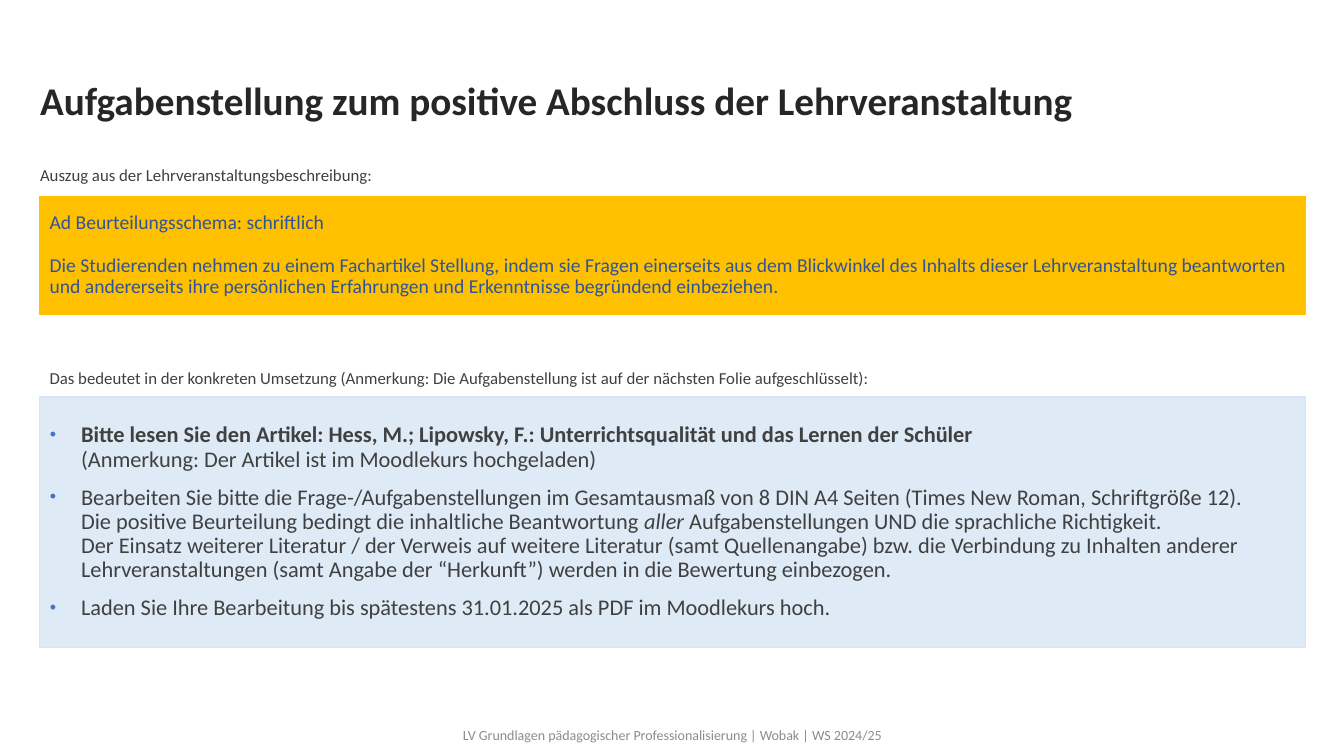
from lxml import etree
from pptx import Presentation
from pptx import util as u
from pptx.dml.color import RGBColor
from pptx.enum import shapes, text
from pptx.oxml.ns import qn

COLOURS = {
    "title": "262626",
    "body": "404040",
    "footer": "8C8C8C",
    "bullet": "4472C4",
    "task_fill": "DEEBF7",
    "task_line": "DAE3F3",
    "excerpt_fill": "FFC000",
    "excerpt_text": "2F5597",
}
FONT = "Calibri"
BOX_LEFT, BOX_WIDTH = 1, 31.9
HANGING = 0.79

EXCERPT = [
    [("Ad Beurteilungsschema: schriftlich", "")],
    [("Die Studierenden nehmen zu einem Fachartikel Stellung, indem sie Fragen einerseits aus dem "
      "Blickwinkel des Inhalts dieser Lehrveranstaltung beantworten und andererseits ihre "
      "persönlichen Erfahrungen und Erkenntnisse begründend einbeziehen.", "")],
]
TASKS = [
    [("Bitte lesen Sie den Artikel: Hess, M.; Lipowsky, F.: Unterrichtsqualität und das Lernen "
      "der Schüler\n", "bold"),
     ("(Anmerkung: Der Artikel ist im Moodlekurs hochgeladen)", "")],
    [("Bearbeiten Sie bitte die Frage-/Aufgabenstellungen im Gesamtausmaß von 8 DIN A4 Seiten "
      "(Times New Roman, Schriftgröße 12).\n"
      "Die positive Beurteilung bedingt die inhaltliche Beantwortung ", ""),
     ("aller ", "italic"),
     ("Aufgabenstellungen UND die sprachliche Richtigkeit.\n"
      "Der Einsatz weiterer Literatur / der Verweis auf weitere Literatur (samt Quellenangabe) "
      "bzw. die Verbindung zu Inhalten anderer Lehrveranstaltungen (samt Angabe der “Herkunft”) "
      "werden in die Bewertung einbezogen.", "")],
    [("Laden Sie Ihre Bearbeitung bis spätestens 31.01.2025 als PDF im Moodlekurs hoch.", "")],
]


def colour(name):
    return RGBColor.from_string(COLOURS[name])


def place(part, left, top, width, height):
    part.left, part.top = u.Cm(left), u.Cm(top)
    part.width, part.height = u.Cm(width), u.Cm(height)


def paint(part, fill, line):
    part.fill.solid()
    part.fill.fore_color.rgb = colour(fill)
    part.line.color.rgb = colour(line)
    part.line.width = u.Pt(1)


def add_bullet(paragraph):
    properties = paragraph._p.get_or_add_pPr()
    properties.set("marL", str(u.Cm(HANGING)))
    properties.set("indent", str(-u.Cm(HANGING)))
    tint = etree.SubElement(properties, qn("a:buClr"))
    etree.SubElement(tint, qn("a:srgbClr"), val=COLOURS["bullet"])
    etree.SubElement(properties, qn("a:buSzPct"), val="80000")
    etree.SubElement(properties, qn("a:buFont"), typeface="Arial")
    etree.SubElement(properties, qn("a:buChar"), char="•")


def add_styled_run(paragraph, wording, style, size, ink):
    for number, line in enumerate(wording.split("\n")):
        if number:
            paragraph.add_line_break()
        if line:
            run = paragraph.add_run()
            run.text = line
            run.font.name, run.font.size = FONT, u.Pt(size)
            run.font.color.rgb = colour(ink)
            run.font.bold = style == "bold"
            run.font.italic = style == "italic"


def write(part, paragraphs, size, ink, gap=0, spacing=0.9, bulleted=False,
          align=text.PP_ALIGN.LEFT):
    frame = part.text_frame
    frame.word_wrap = True
    frame.auto_size = text.MSO_AUTO_SIZE.NONE
    frame.vertical_anchor = text.MSO_ANCHOR.MIDDLE
    for number, runs in enumerate(paragraphs):
        paragraph = frame.add_paragraph() if number else frame.paragraphs[0]
        if bulleted:
            add_bullet(paragraph)
        paragraph.alignment = align
        paragraph.line_spacing = spacing
        paragraph.space_before = u.Pt(gap if number else 0)
        paragraph.font.size = u.Pt(size)
        for wording, style in runs:
            add_styled_run(paragraph, wording, style, size, ink)


def add_label(slide, wording, left, top, width, size=12, ink="body", **layout):
    label = slide.shapes.add_textbox(0, 0, 0, 0)
    place(label, left, top, width, 1.02)
    write(label, [[(wording, "")]], size, ink, **layout)


def add_excerpt(slide):
    excerpt = slide.shapes.add_shape(shapes.MSO_SHAPE.RECTANGLE, 0, 0, 0, 0)
    excerpt.shadow.inherit = False
    place(excerpt, BOX_LEFT, 4.95, BOX_WIDTH, 2.97)
    paint(excerpt, "excerpt_fill", "excerpt_line" if "excerpt_line" in COLOURS else "excerpt_fill")
    write(excerpt, EXCERPT, 14, "excerpt_text", gap=15.4)


def fill_title(title):
    place(title, 0.76, 0.76, 32, 3.68)
    write(title, [[("Aufgabenstellung zum positive Abschluss der Lehrveranstaltung", "bold")]],
          28, "title")


def fill_tasks(tasks):
    place(tasks, BOX_LEFT, 10, BOX_WIDTH, 6.32)
    paint(tasks, "task_fill", "task_line")
    write(tasks, TASKS, 16, "body", gap=10, bulleted=True)


def main():
    deck = Presentation()
    deck.slide_width, deck.slide_height = u.Cm(33.87), u.Cm(19.05)
    slide = deck.slides.add_slide(deck.slide_layouts[1])
    fill_title(slide.shapes.title)
    fill_tasks(slide.placeholders[1])
    add_excerpt(slide)
    add_label(slide, "Auszug aus der Lehrveranstaltungsbeschreibung:", 0.76, 3.9, 24.13, spacing=1)
    add_label(slide, "Das bedeutet in der konkreten Umsetzung (Anmerkung: Die Aufgabenstellung ist "
              "auf der nächsten Folie aufgeschlüsselt):", BOX_LEFT, 9, 24.13, spacing=1)
    add_label(slide, "LV Grundlagen pädagogischer Professionalisierung | Wobak | WS 2024/25",
              11.23, 18.03, 11.43, size=10, ink="footer", align=text.PP_ALIGN.CENTER)
    deck.save("out.pptx")


if __name__ == "__main__":
    main()
